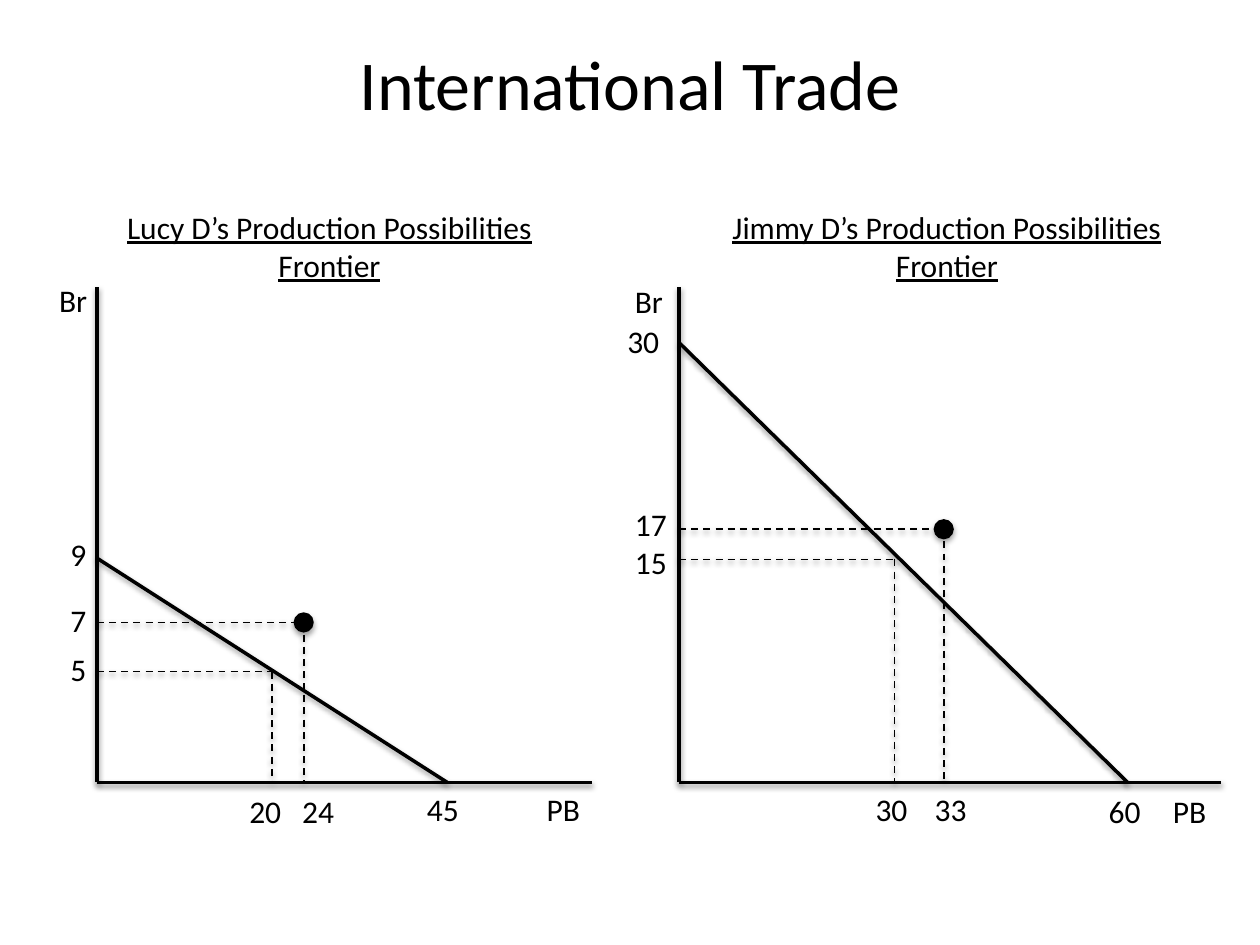
from dataclasses import dataclass

import lxml.etree
import pptx
import pptx.dml.color
import pptx.enum.dml
import pptx.enum.shapes
import pptx.enum.text
import pptx.oxml.ns
import pptx.util

Inches = pptx.util.Inches
Pt = pptx.util.Pt
BLACK = pptx.dml.color.RGBColor(0x00, 0x00, 0x00)
CENTER = pptx.enum.text.PP_ALIGN.CENTER
DASH = pptx.enum.dml.MSO_LINE.DASH
BASE = 6.21  # height of both horizontal axes
TOP = 2.28
DOT = 0.15


@dataclass
class Label:
    text: str
    left: float
    top: float


@dataclass
class Graph:
    name: str
    head: float     # left edge of the heading
    axis: float     # x of the vertical axis
    right: float    # end of the horizontal axis
    start: float    # y where the frontier leaves the vertical axis
    end: float      # x where the frontier meets the horizontal axis
    made: tuple[float, float]
    trade: tuple[float, float]
    labels: list[Label]


GRAPHS = [
    Graph("Lucy D’s", 0.65, 0.77, 4.7, 4.43, 3.55, (2.16, 5.33), (2.41, 4.94), [
        Label("Br", 0.37, 2.18), Label("9", 0.46, 4.2),
        Label("7", 0.46, 4.72), Label("5", 0.46, 5.11),
        Label("20", 1.88, 6.24), Label("24", 2.3, 6.24),
        Label("45", 3.29, 6.22), Label("PB", 4.24, 6.22)]),
    Graph("Jimmy D’s", 5.55, 5.39, 9.69, 2.72, 8.95, (7.1, 4.44), (7.49, 4.2), [
        Label("Br", 4.94, 2.19), Label("30", 4.88, 2.51),
        Label("17", 4.94, 3.96), Label("15", 4.94, 4.26),
        Label("30", 6.85, 6.22), Label("33", 7.32, 6.22),
        Label("60", 8.7, 6.24), Label("PB", 9.21, 6.24)]),
]


def style(font, size: float, **extra) -> None:
    values = {"name": "Calibri", "size": Pt(size), **extra}
    for key, value in values.items():
        setattr(font, key, value)
    font.color.rgb = BLACK


def shade(shape, drop: float, alpha: int) -> None:
    """Give a shape a soft shadow straight below it."""
    qn = pptx.oxml.ns.qn
    sub = lxml.etree.SubElement
    effect = sub(shape._element.spPr, qn("a:effectLst"))
    outer = sub(effect, qn("a:outerShdw"), blurRad=str(Pt(3.1)),
                dist=str(Pt(drop)), dir="5400000", rotWithShape="0")
    color = sub(outer, qn("a:srgbClr"), val=str(BLACK))
    sub(color, qn("a:alpha"), val=str(alpha * 1000))


def rule(slide, x1: float, y1: float, x2: float, y2: float,
         width: float = 2, dash=None) -> None:
    line = slide.shapes.add_connector(
        pptx.enum.shapes.MSO_CONNECTOR.STRAIGHT,
        Inches(x1), Inches(y1), Inches(x2), Inches(y2))
    line.line.color.rgb = BLACK
    line.line.width = Pt(width)
    if dash:
        line.line.dash_style = dash
    shade(line, 1.6, 38)


def write(slide, label: Label, width: float = 0.51, height: float = 0.4,
          align=None, **extra) -> None:
    box = slide.shapes.add_textbox(Inches(label.left), Inches(label.top),
                                   Inches(width), Inches(height))
    box.text_frame.word_wrap = True
    para = box.text_frame.paragraphs[0]
    para.alignment = align
    run = para.add_run()
    run.text = label.text
    style(run.font, 18, **extra)


def guide(slide, axis: float, spot: tuple[float, float]) -> None:
    """Dash from the vertical axis to a point, then down to the base."""
    x, y = spot
    rule(slide, axis, y, x, y, 1, DASH)
    rule(slide, x, y, x, BASE, 1, DASH)


def mark(slide, spot: tuple[float, float]) -> None:
    x, y = spot
    dot = slide.shapes.add_shape(
        pptx.enum.shapes.MSO_SHAPE.OVAL, Inches(x - DOT / 2),
        Inches(y - DOT / 2), Inches(DOT), Inches(DOT))
    dot.fill.solid()
    dot.fill.fore_color.rgb = BLACK
    dot.line.color.rgb = BLACK
    dot.line.width = Pt(0.75)
    shade(dot, 1.8, 35)


def draw(slide, graph: Graph) -> None:
    # Heading
    head = Label(f"{graph.name} Production Possibilities Frontier",
                 graph.head, 1.6)
    write(slide, head, 3.93, 0.71, CENTER, underline=True)
    # Axes and frontier
    rule(slide, graph.axis, TOP, graph.axis, BASE)
    rule(slide, graph.axis, BASE, graph.right, BASE)
    rule(slide, graph.axis, graph.start, graph.end, BASE)
    # Points before and after trade
    guide(slide, graph.axis, graph.made)
    guide(slide, graph.axis, graph.trade)
    mark(slide, graph.trade)
    # Axis labels
    for label in graph.labels:
        write(slide, label)


def main() -> None:
    deck = pptx.Presentation()
    deck.slide_width, deck.slide_height = Inches(10), Inches(7.5)
    slide = deck.slides.add_slide(deck.slide_layouts[5])

    # Title
    title = slide.shapes.title
    place = {"left": 0.5, "top": 0.03, "width": 9, "height": 1.25}
    for key, value in place.items():
        setattr(title, key, Inches(value))
    title.text_frame.text = "International Trade"
    title.text_frame.vertical_anchor = pptx.enum.text.MSO_ANCHOR.MIDDLE
    para = title.text_frame.paragraphs[0]
    para.alignment = CENTER
    style(para.runs[0].font, 40)

    for graph in GRAPHS:
        draw(slide, graph)
    deck.save("out.pptx")


if __name__ == "__main__":
    main()
